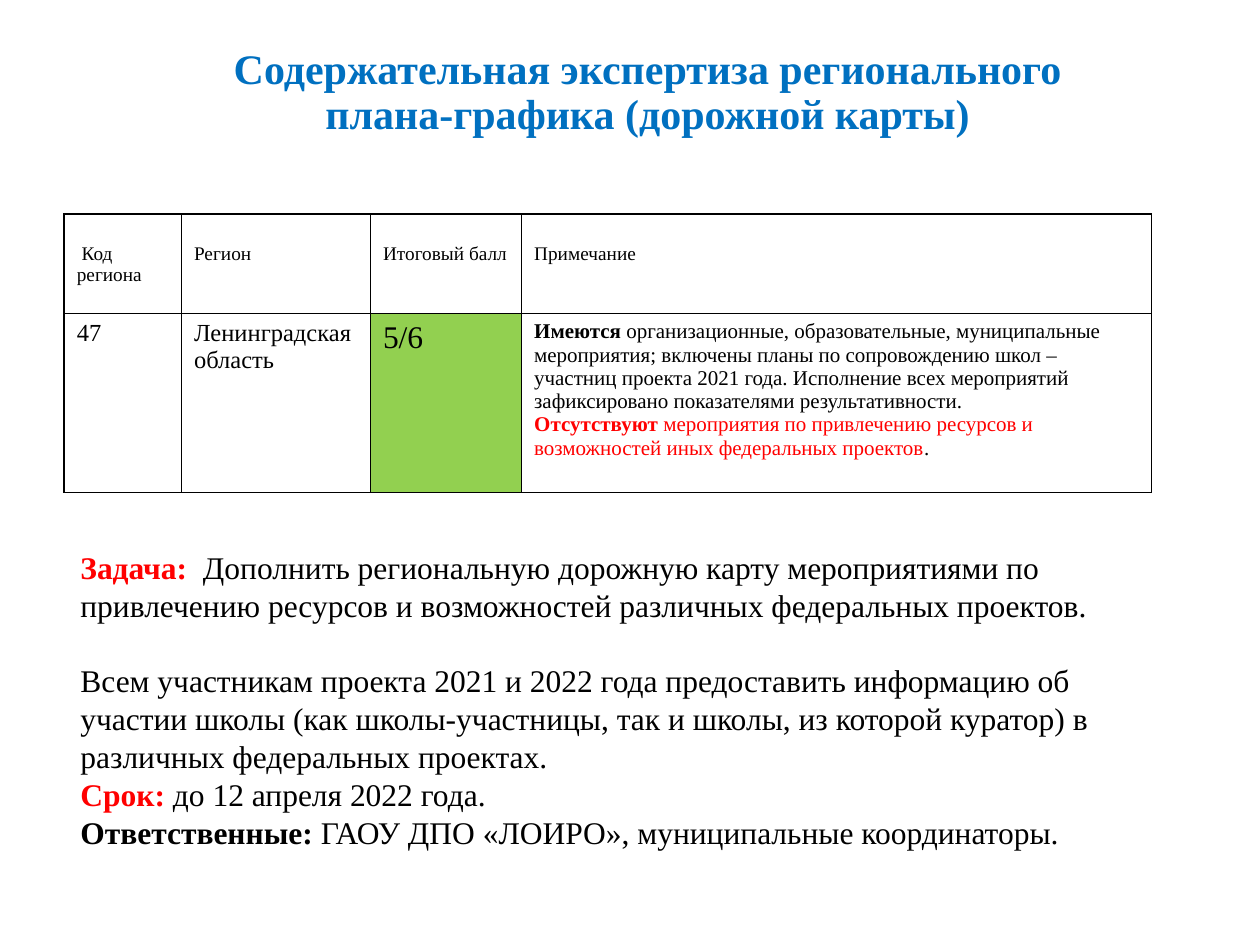
import pptx
import pptx.dml.color
import pptx.enum.text
import pptx.oxml
import pptx.oxml.ns
import pptx.util

RGB = pptx.dml.color.RGBColor
BLACK = RGB(0x00, 0x00, 0x00)
WHITE = RGB(0xFF, 0xFF, 0xFF)
BLUE = RGB(0x00, 0x70, 0xC0)
RED = RGB(0xFF, 0x00, 0x00)
GREEN = RGB(0x92, 0xD0, 0x50)

FACE = "Times New Roman"
WIDE, HIGH = 10, 7.5
COLS, ROWS = 100, 75
TITLE_ONLY = 5


def write(para, text, size=12, color=BLACK, bold=False):
    run = para.add_run()
    run.text = text
    font = run.font
    font.name, font.size, font.bold = FACE, pptx.util.Pt(size), bold
    font.color.rgb = color


def fill_in(frame, paras, size):
    """Write paragraphs, each a list of (text, format) runs."""
    for i, runs in enumerate(paras):
        para = frame.paragraphs[0] if i == 0 else frame.add_paragraph()
        for text, form in runs:
            write(para, text, **{"size": size, **form})


def edge(cell):
    """Draw a black 1 pt line on each side of a cell."""
    props = cell._tc.get_or_add_tcPr()
    for side in "LRTB":
        props.append(pptx.oxml.parse_xml(
            f'<a:ln{side} {pptx.oxml.ns.nsdecls("a")} w="12700">'
            f'<a:solidFill><a:srgbClr val="{BLACK}"/></a:solidFill>'
            f'</a:ln{side}>'))


class Page:
    """Holds the slide and its grid."""

    def __init__(self, deck):
        self.slide = deck.slides.add_slide(deck.slide_layouts[TITLE_ONLY])
        self.col = deck.slide_width / COLS
        self.row = deck.slide_height / ROWS

    def box(self, x, y, w, h):
        return (int(x * self.col), int(y * self.row),
                int(w * self.col), int(h * self.row))

    def title(self, text, place):
        head = self.slide.shapes.title
        head.left, head.top, head.width, head.height = self.box(*place)
        frame = head.text_frame
        frame.word_wrap = True
        frame.auto_size = pptx.enum.text.MSO_AUTO_SIZE.NONE
        frame.vertical_anchor = pptx.enum.text.MSO_ANCHOR.MIDDLE
        para = frame.paragraphs[0]
        para.alignment = pptx.enum.text.PP_ALIGN.CENTER
        para.line_spacing = 0.9
        for i, line in enumerate(text.split("\n")):
            if i:
                para.add_line_break()
            write(para, line, size=24, color=BLUE, bold=True)

    def table(self, cells, x, y, wides, highs):
        """Place rows of cells, each (paragraphs, size, fill)."""
        place = self.box(x, y, sum(wides), sum(highs))
        grid = self.slide.shapes.add_table(
            len(highs), len(wides), *place).table
        grid.first_row = grid.horz_banding = False
        for col, wide in zip(grid.columns, wides):
            col.width = int(wide * self.col)
        for row, high in zip(grid.rows, highs):
            row.height = int(high * self.row)
        for r, line in enumerate(cells):
            for c, (paras, size, fill) in enumerate(line):
                cell = grid.cell(r, c)
                edge(cell)
                cell.fill.solid()
                cell.fill.fore_color.rgb = fill
                if r == 0:
                    cell.margin_top = pptx.util.Inches(0.23)
                fill_in(cell.text_frame, paras, size)

    def text(self, paras, place, size):
        frame = self.slide.shapes.add_textbox(*self.box(*place)).text_frame
        frame.word_wrap = True
        fill_in(frame, paras, size)
        return frame


def main():
    deck = pptx.Presentation()
    deck.slide_width = pptx.util.Inches(WIDE)
    deck.slide_height = pptx.util.Inches(HIGH)
    page = Page(deck)
    bold, alert = {"bold": True}, {"bold": True, "color": RED}

    page.title("Содержательная экспертиза регионального\n"
               "плана-графика (дорожной карты)", (8.3, 5.2, 86.2, 4.4))

    heads = [" Код региона", "Регион", "Итоговый балл", "Примечание"]
    note = [
        [("Имеются ", bold),
         ("организационные, образовательные, муниципальные мероприятия; "
          "включены планы по сопровождению школ – участниц проекта "
          "2021 года. Исполнение всех мероприятий зафиксировано "
          "показателями результативности.", {})],
        [("Отсутствуют ", alert),
         ("мероприятия по привлечению ресурсов и возможностей иных "
          "федеральных проектов", {"color": RED}),
         (".", {})],
    ]
    page.table([
        [([[(head, {})]], 11, WHITE) for head in heads],
        [([[("47", {})]], 14, WHITE),
         ([[("Ленинградская область", {})]], 14, WHITE),
         ([[("5/6", {})]], 18, GREEN),
         (note, 12, WHITE)],
    ], 5.1, 17, wides=(9.3, 15, 12, 50), highs=(7.9, 14.2))

    tasks = page.text([
        [("Задача:  ", alert),
         ("Дополнить региональную дорожную карту мероприятиями по "
          "привлечению ресурсов и возможностей различных федеральных "
          "проектов.", {})],
        [("Всем участникам проекта 2021 и 2022 года предоставить "
          "информацию об участии школы (как школы-участницы, так и школы, "
          "из которой куратор) в различных федеральных проектах.", {})],
        [("Срок:", alert), (" до 12 апреля 2022 года.", {})],
        [("Ответственные:", bold),
         (" ГАОУ ДПО «ЛОИРО», муниципальные координаторы.", {})],
    ], (5.4, 43, 89, 25.2), 18)
    tasks.paragraphs[1].space_before = pptx.util.Pt(21.6)

    deck.save("out.pptx")


if __name__ == "__main__":
    main()
